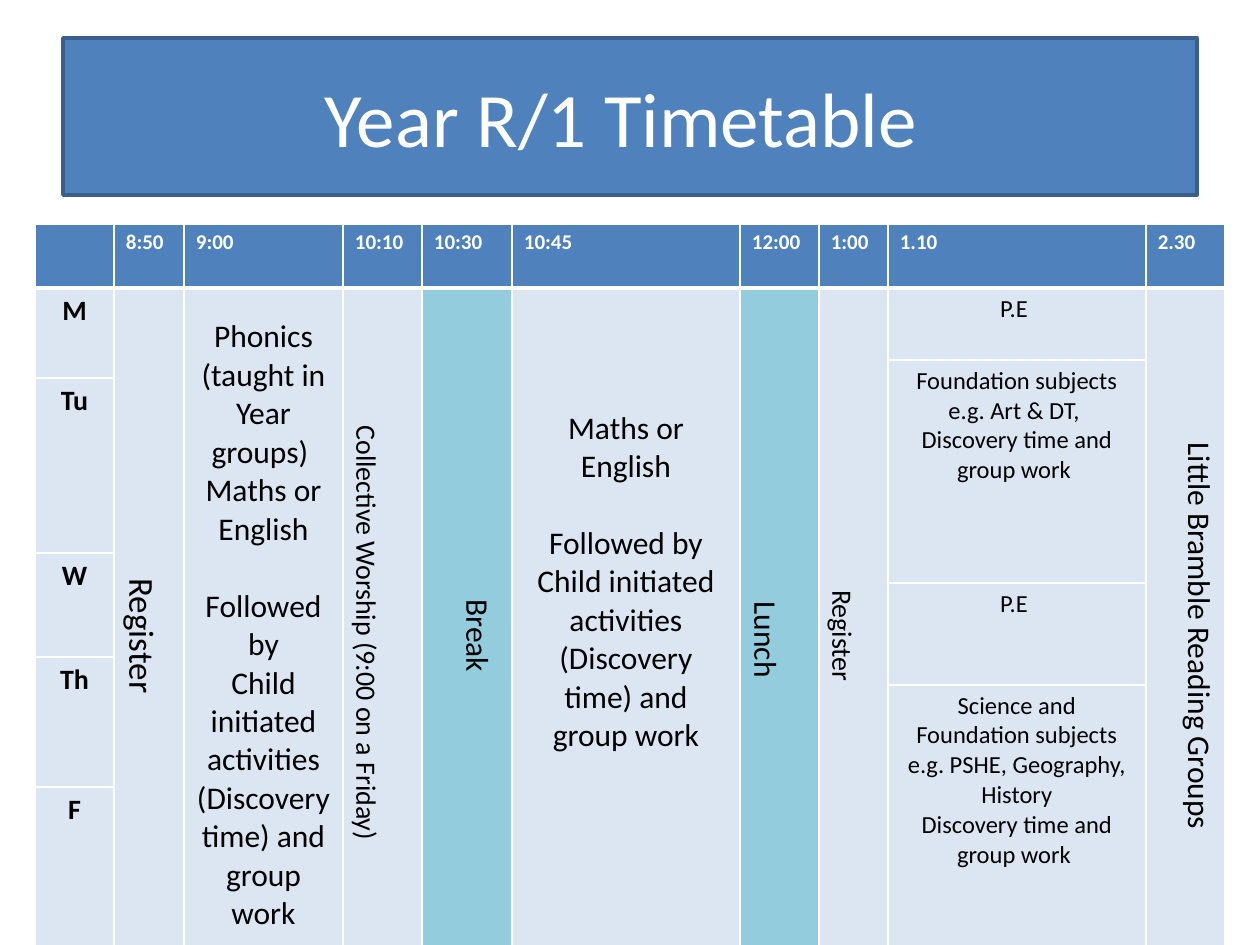
from dataclasses import dataclass

from lxml import etree
from pptx import Presentation
from pptx.dml.color import RGBColor
from pptx.enum.shapes import MSO_SHAPE
from pptx.enum.text import MSO_ANCHOR, PP_ALIGN
from pptx.oxml.ns import qn
from pptx.util import Emu, Pt

CENTER, LEFT = PP_ALIGN.CENTER, PP_ALIGN.LEFT
MIDDLE = MSO_ANCHOR.MIDDLE
RECTANGLE = MSO_SHAPE.RECTANGLE
EMU_PER_PX = 914400 / 126
BLANK_LAYOUT = 6


@dataclass(frozen=True)
class Theme:
    font: str = "Calibri"
    blue: str = "4F81BD"
    outline: str = "3A5F8C"
    pale: str = "DCE6F2"
    aqua: str = "93CDDD"
    white: str = "FFFFFF"
    black: str = "000000"
    title: int = 44
    large: int = 20
    body: int = 18
    medium: int = 16
    small: int = 14
    header: int = 12


THEME = Theme()


@dataclass(frozen=True)
class Entry:
    row: int
    column: int
    row_span: int
    paragraphs: tuple[str, ...]
    size: int
    fill: str = THEME.pale
    color: str = THEME.black
    bold: bool = False
    vertical: bool = False
    align: PP_ALIGN = CENTER
    top: int = 6
    bottom: int = 6  # in vertical cells this is the inset from the left edge
    side: int = 12
    gap_before: int | None = None  # index of the paragraph set apart by one line
    rule_below: int = 1


COLUMN_WIDTHS = (79, 70, 159, 79, 90, 228, 79, 69, 258, 79)
ROW_HEIGHTS = (64, 72, 18, 175, 30, 74, 28, 102, 197)
TABLE_LEFT, TABLE_TOP = 35, 224
LESSON_ROWS = len(ROW_HEIGHTS) - 1

TIMES = ("", "8:50", "9:00", "10:10", "10:30", "10:45", "12:00", "1:00", "1.10", "2.30")
DAYS = (("M", 1, 2), ("Tu", 3, 1), ("W", 4, 2), ("Th", 6, 2), ("F", 8, 1))
AFTERNOONS = (
    (1, 1, ("P.E ",)),
    (2, 3, ("Foundation subjects e.g. Art & DT, ", "Discovery time and group work ")),
    (5, 2, ("P.E ",)),
    (7, 2, ("Science and Foundation subjects e.g. PSHE, Geography, History",
            "Discovery time and group work ")),
)


def all_day(column: int, *paragraphs: str, size: int = THEME.body, **options) -> Entry:
    return Entry(1, column, LESSON_ROWS, paragraphs, size, **options)


ENTRIES = (
    *(Entry(0, column, 1, (time,), THEME.header, THEME.blue, THEME.white, True,
            align=LEFT, rule_below=3) for column, time in enumerate(TIMES)),
    *(Entry(row, 0, span, (day,), THEME.medium, bold=True) for day, row, span in DAYS),
    all_day(1, "Register", size=THEME.large, vertical=True),
    all_day(2, "Phonics (taught in Year groups) ", "Maths or English", "Followed by",
            "Child initiated activities (Discovery time) and group work",
            top=30, side=10, gap_before=2),
    all_day(3, "Collective Worship (9:00 on a Friday) ", size=THEME.medium, vertical=True),
    all_day(4, "Break", fill=THEME.aqua, vertical=True, bottom=36),
    all_day(5, "Maths or English", "Followed by",
            "Child initiated activities (Discovery time) and group work",
            top=121, gap_before=1),
    all_day(6, " Lunch", fill=THEME.aqua, vertical=True),
    all_day(7, "Register", size=THEME.medium, vertical=True),
    *(Entry(row, 8, span, lines, THEME.small) for row, span, lines in AFTERNOONS),
    all_day(9, "Little Bramble Reading Groups", vertical=True, bottom=34),
)


def px(length: int) -> Emu:
    return Emu(round(length * EMU_PER_PX))


def rgb(color: str) -> RGBColor:
    return RGBColor.from_string(color)


def style_paragraph(paragraph, size: int, color: str, bold: bool, align: PP_ALIGN) -> None:
    paragraph.alignment = align
    font = paragraph.font
    font.name, font.size, font.bold = THEME.font, Pt(size), bold
    font.color.rgb = rgb(color)


def add_borders(cell, rule_below: int) -> None:
    properties = cell._tc.get_or_add_tcPr()
    sides = (("a:lnL", 1), ("a:lnR", 1), ("a:lnT", 1), ("a:lnB", rule_below))
    for index, (tag, width) in enumerate(sides):
        line = etree.Element(qn(tag), w=str(Pt(width)))
        fill = etree.SubElement(line, qn("a:solidFill"))
        etree.SubElement(fill, qn("a:srgbClr"), val=THEME.white)
        properties.insert(index, line)


def draw_entry(table, entry: Entry) -> None:
    cell = table.cell(entry.row, entry.column)
    last_row = entry.row + entry.row_span - 1
    if entry.row_span > 1:
        cell.merge(table.cell(last_row, entry.column))
    for row in range(entry.row, last_row + 1):
        part = table.cell(row, entry.column)
        part.fill.solid()
        part.fill.fore_color.rgb = rgb(entry.fill)
        add_borders(part, entry.rule_below)
    cell.margin_top, cell.margin_bottom = px(entry.top), px(entry.bottom)
    cell.margin_left = cell.margin_right = px(entry.side)
    if entry.vertical:
        cell._tc.get_or_add_tcPr().set("vert", "vert")
    cell.text = "\n".join(entry.paragraphs)
    for index, paragraph in enumerate(cell.text_frame.paragraphs):
        style_paragraph(paragraph, entry.size, entry.color, entry.bold, entry.align)
        if index == entry.gap_before:
            paragraph.space_before = Pt(22)


def draw_title(slide) -> None:
    banner = slide.shapes.add_shape(RECTANGLE, px(63), px(38), px(1134), px(157))
    banner.shadow.inherit = False
    banner.fill.solid()
    banner.fill.fore_color.rgb = rgb(THEME.blue)
    banner.line.color.rgb = rgb(THEME.outline)
    banner.line.width = Pt(2)
    banner.text_frame.text = "Year R/1 Timetable "
    banner.text_frame.word_wrap = True
    banner.text_frame.vertical_anchor = MIDDLE
    style_paragraph(banner.text_frame.paragraphs[0], THEME.title, THEME.white, False, CENTER)


def draw_timetable(slide) -> None:
    table = slide.shapes.add_table(
        len(ROW_HEIGHTS), len(COLUMN_WIDTHS), px(TABLE_LEFT), px(TABLE_TOP),
        px(sum(COLUMN_WIDTHS)), px(sum(ROW_HEIGHTS))).table
    for column, width in zip(table.columns, COLUMN_WIDTHS):
        column.width = px(width)
    for row, height in zip(table.rows, ROW_HEIGHTS):
        row.height = px(height)
    for entry in ENTRIES:
        draw_entry(table, entry)


def main() -> None:
    presentation = Presentation()
    presentation.slide_width, presentation.slide_height = px(1260), px(945)
    slide = presentation.slides.add_slide(presentation.slide_layouts[BLANK_LAYOUT])
    draw_title(slide)
    draw_timetable(slide)
    presentation.save("out.pptx")


if __name__ == "__main__":
    main()
